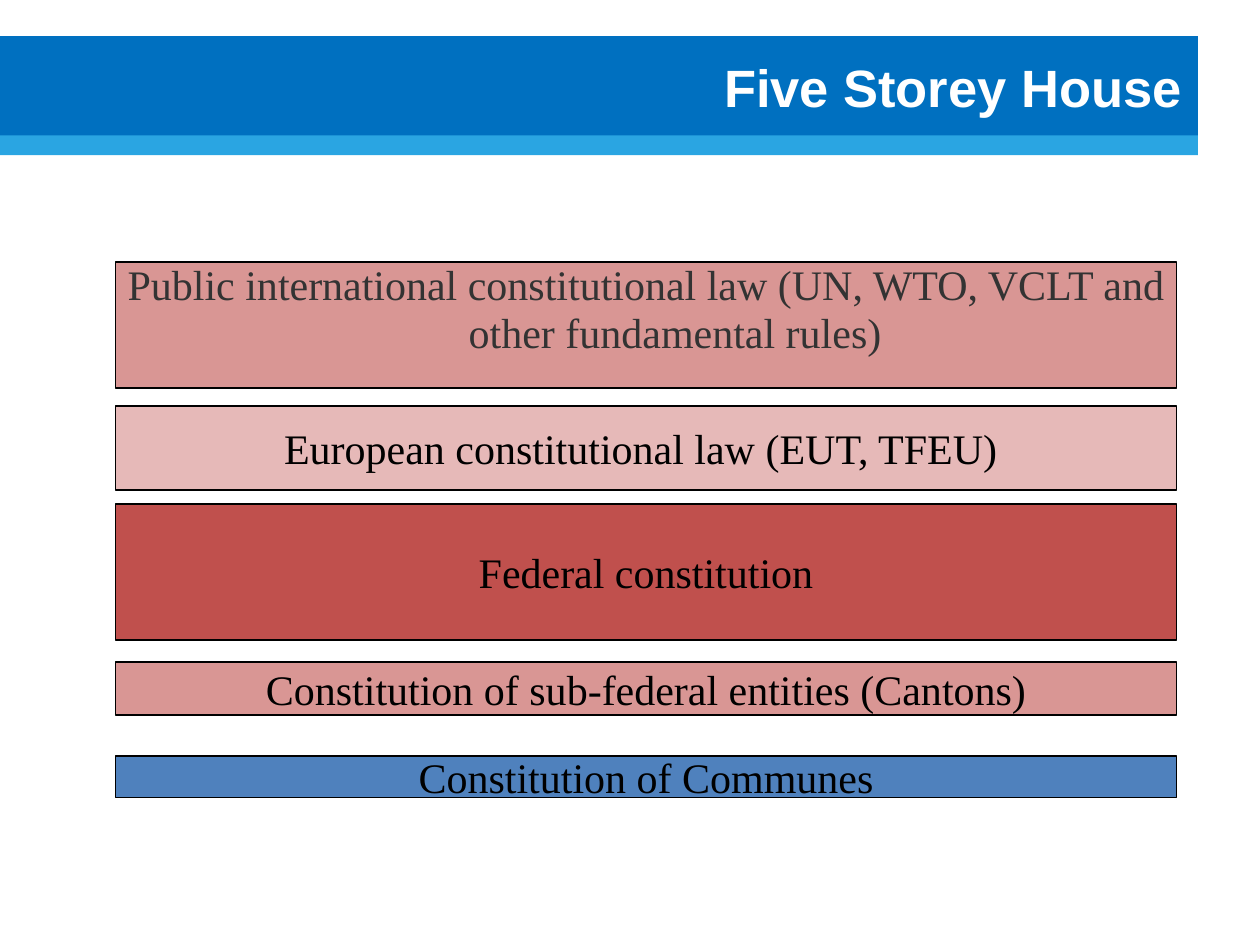
import pptx
import pptx.util
import pptx.dml.color
import pptx.enum.shapes
import pptx.enum.text

Cm, Pt = pptx.util.Cm, pptx.util.Pt
ALIGN = pptx.enum.text.PP_ALIGN
ANCHOR = pptx.enum.text.MSO_ANCHOR

COLORS = {
    "band": "0070C0", "stripe": "2AA5E2", "white": "FFFFFF",
    "black": "000000", "gray": "333333", "rose": "D99694",
    "pale": "E6B9B8", "red": "C0504D", "blue": "4F81BD",
}

# Content: storeys from top to bottom (text, fill, top, height in cm, text format)
TITLE = "Five Storey House"
STOREYS = [
    ("Public international constitutional law (UN, WTO, VCLT and other fundamental rules)",
     "rose", 5.29, 2.54,
     dict(color="gray", anchor=ANCHOR.TOP, wrap=True, inset=0, hanging=1.17, spacing=0.95)),
    ("European constitutional law (EUT, TFEU) ", "pale", 8.18, 1.7, {}),
    ("Federal constitution", "red", 10.16, 2.74, {}),
    ("Constitution of sub-federal entities (Cantons)", "rose", 13.34, 1.07, {}),
    ("Constitution of Communes", "blue", 15.24, 0.84, {}),
]
STOREY_LEFT, STOREY_WIDTH = 2.33, 21.39
HEADER_WIDTH = 24.15


def rgb(name):
    return pptx.dml.color.RGBColor.from_string(COLORS[name])


def add_bar(slide, left, top, width, height, fill, outline=None):
    bar = slide.shapes.add_shape(pptx.enum.shapes.MSO_SHAPE.RECTANGLE,
                                 Cm(left), Cm(top), Cm(width), Cm(height))
    bar.shadow.inherit = False
    bar.fill.solid()
    bar.fill.fore_color.rgb = rgb(fill)
    if outline:
        bar.line.color.rgb = rgb(outline)
        bar.line.width = Pt(1)
    else:
        bar.line.fill.background()
    return bar


def write(box, text, font="Times New Roman", size=24, color="black", bold=False,
          align=ALIGN.CENTER, anchor=ANCHOR.MIDDLE, wrap=False, inset=None,
          hanging=None, spacing=None):
    frame = box.text_frame
    frame.word_wrap = wrap
    frame.vertical_anchor = anchor
    if inset is not None:
        frame.margin_left = frame.margin_right = Cm(inset)
        frame.margin_top = frame.margin_bottom = Cm(inset)
    paragraph = frame.paragraphs[0]
    paragraph.alignment = align
    if hanging:
        properties = paragraph._p.get_or_add_pPr()
        properties.set("marL", str(Cm(hanging)))
        properties.set("indent", str(-Cm(hanging)))
    if spacing:
        paragraph.line_spacing = spacing
    run = paragraph.add_run()
    run.text = text
    run.font.name = font
    run.font.size = Pt(size)
    run.font.bold = bold
    run.font.color.rgb = rgb(color)


presentation = pptx.Presentation()
presentation.slide_width, presentation.slide_height = Cm(25.4), Cm(19.05)
slide = presentation.slides.add_slide(presentation.slide_layouts[6])

# Header
add_bar(slide, 0, 2.72, HEADER_WIDTH, 0.41, "stripe")
add_bar(slide, 0, 0.73, HEADER_WIDTH, 2, "band")
title = slide.shapes.add_textbox(Cm(1.3), Cm(0.77), Cm(22.78), Cm(1.96))
write(title, TITLE, font="Arial", size=30, color="white", bold=True,
      align=ALIGN.RIGHT, wrap=True)

# Storeys
for text, fill, top, height, text_format in STOREYS:
    storey = add_bar(slide, STOREY_LEFT, top, STOREY_WIDTH, height, fill, outline="black")
    write(storey, text, **text_format)

presentation.save("out.pptx")
